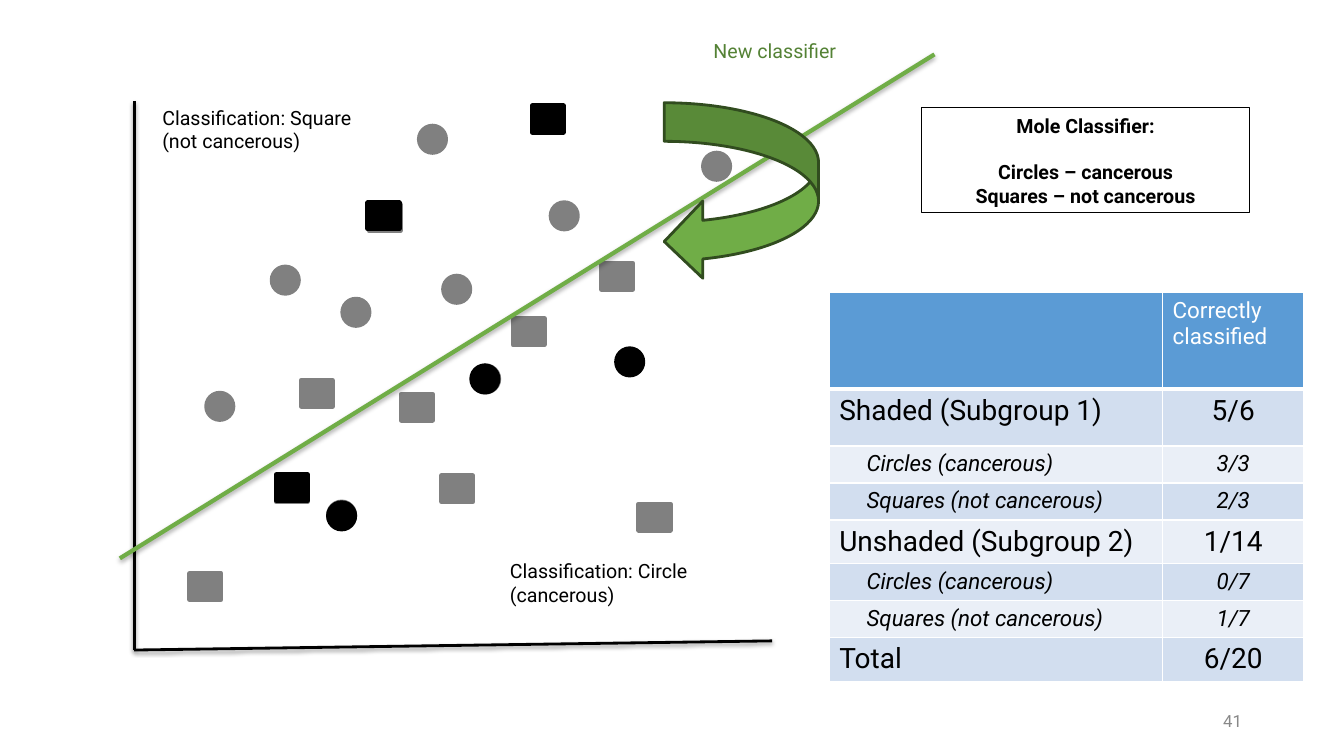
from lxml.etree import SubElement
from pptx import Presentation
from pptx.dml.color import RGBColor
from pptx.enum.shapes import MSO_CONNECTOR, MSO_SHAPE
from pptx.enum.text import MSO_ANCHOR, PP_ALIGN
from pptx.oxml.ns import qn
from pptx.util import Cm, Pt

FONT = "Roboto"
BLACK, GRAY, WHITE = "000000", "808080", "FFFFFF"
GREEN, DARK_GREEN, LABEL_GREEN = "70AD47", "314C1F", "548235"
HEADER_BLUE, BANDS = "5B9BD5", ("D2DEEF", "EAEFF7")
SQUARE, CIRCLE = (MSO_SHAPE.RECTANGLE, 0.79), (MSO_SHAPE.OVAL, 0.66)
MARK_HEIGHT = 0.66

MOLES = [
    (SQUARE, GRAY, [(9.3, 5.16), (6.96, 11.99), (10.11, 9.93), (12.93, 8.03), (15.16, 6.63),
                    (7.59, 9.58), (4.78, 14.45), (11.13, 11.99), (16.1, 12.7)]),
    (CIRCLE, GRAY, [(8.64, 7.54), (11.18, 6.96), (13.89, 5.11), (8.28, 12.65), (6.86, 6.73),
                    (5.21, 9.91), (11.91, 9.22), (17.73, 3.86), (10.57, 3.18)]),
    (CIRCLE, BLACK, [(15.54, 8.79), (11.89, 9.22), (8.28, 12.67)]),
    (SQUARE, BLACK, [(9.27, 5.11), (13.41, 2.67), (6.96, 11.96)]),
]

GROUP, DETAIL = (20, False, 0.25), (16, True, 0.94)
RESULTS = [
    ("Shaded (Subgroup 1)", "5/6", GROUP, 1.43),
    ("Circles (cancerous)", "3/3", DETAIL, 0.91),
    ("Squares (not cancerous)", "2/3", DETAIL, 0.91),
    ("Unshaded (Subgroup 2)", "1/14", GROUP, 1.09),
    ("Circles (cancerous)", "0/7", DETAIL, 0.91),
    ("Squares (not cancerous)", "1/7", DETAIL, 0.91),
    ("Total", "6/20", GROUP, 1.09),
]


def color(value):
    """Turn a hex string into a colour."""
    return RGBColor.from_string(value)


def write(para, text, size, ink=BLACK, bold=False, italic=False, align=PP_ALIGN.LEFT):
    """Add one formatted run to a paragraph."""
    para.alignment = align
    span = para.add_run()
    span.text = text
    font = span.font
    font.name, font.size, font.bold, font.italic = FONT, Pt(size), bold, italic
    font.color.rgb = color(ink)


def fill_frame(frame, lines, size, **style):
    """Write each line as a paragraph of a wrapping text frame."""
    frame.word_wrap = True
    for index, text in enumerate(lines):
        para = frame.add_paragraph() if index else frame.paragraphs[0]
        write(para, text, size, **style)


def add_label(page, frame, lines, size=14, anchor=MSO_ANCHOR.TOP, **style):
    """Add a text box."""
    box = page.shapes.add_textbox(*map(Cm, frame))
    box.text_frame.vertical_anchor = anchor
    fill_frame(box.text_frame, lines, size, **style)


def add_figure(page, kind, frame, fill, line, width):
    """Add a preset shape; without a fill it stays open."""
    shape = page.shapes.add_shape(kind, *map(Cm, frame))
    shape.shadow.inherit = False
    if fill:
        shape.fill.solid()
        shape.fill.fore_color.rgb = color(fill)
    else:
        shape.fill.background()
    shape.line.color.rgb = color(line)
    shape.line.width = Pt(width)
    return shape


def add_line(page, start, end, ink, width, shade):
    """Add a straight line with a soft shadow below it."""
    line = page.shapes.add_connector(MSO_CONNECTOR.STRAIGHT, *map(Cm, start + end))
    line.line.color.rgb = color(ink)
    line.line.width = Pt(width)
    effects = SubElement(line._element.spPr, qn("a:effectLst"))
    shadow = SubElement(effects, qn("a:outerShdw"), blurRad=str(Pt(3.1)), dist=str(Pt(1.6)),
                        dir="5400000", rotWithShape="0")
    black = SubElement(shadow, qn("a:srgbClr"), val=BLACK)
    SubElement(black, qn("a:alpha"), val=str(shade * 1000))


def style_cell(cell, fill, bottom=1):
    """Give a cell white borders and a solid fill."""
    properties = cell._tc.get_or_add_tcPr()
    for side, width in (("L", 1), ("R", 1), ("T", 1), ("B", bottom)):
        border = SubElement(properties, qn(f"a:ln{side}"), w=str(Pt(width)))
        SubElement(SubElement(border, qn("a:solidFill")), qn("a:srgbClr"), val=WHITE)
    cell.fill.solid()
    cell.fill.fore_color.rgb = color(fill)


def add_results(page):
    """Add the table of correctly classified moles."""
    frame = page.shapes.add_table(len(RESULTS) + 1, 2, Cm(20.9), Cm(7.37), Cm(11.96), Cm(9.69))
    table = frame.table
    table.first_row = table.horz_banding = False
    table.columns[0].width, table.columns[1].width = Cm(8.4), Cm(3.56)
    table.rows[0].height = Cm(2.44)
    for cell in table.rows[0].cells:
        style_cell(cell, HEADER_BLUE, bottom=3)
    write(table.cell(0, 1).text_frame.paragraphs[0], "Correctly classified", 16, WHITE)
    for row, (name, score, (size, italic, indent), height) in enumerate(RESULTS, 1):
        table.rows[row].height = Cm(height)
        table.cell(row, 0).margin_left = Cm(indent)
        for column, (text, align) in enumerate(((name, PP_ALIGN.LEFT), (score, PP_ALIGN.CENTER))):
            cell = table.cell(row, column)
            style_cell(cell, BANDS[(row - 1) % 2])
            write(cell.text_frame.paragraphs[0], text, size, italic=italic, align=align)


def add_moles(page):
    """Scatter the circles and squares."""
    for (kind, width), ink, places in MOLES:
        for left, top in places:
            add_figure(page, kind, (left, top, width, MARK_HEIGHT), ink, ink, 3.5)


def add_key(page):
    """Add the framed key of the mole classifier."""
    key = add_figure(page, MSO_SHAPE.RECTANGLE, (23.22, 2.72, 8.28, 2.64), None, BLACK, 0.75)
    lines = ["Mole Classifier:", "Circles – cancerous", "Squares – not cancerous"]
    fill_frame(key.text_frame, lines, 14, bold=True, align=PP_ALIGN.CENTER)
    key.text_frame.paragraphs[1].space_before = Pt(16.5)


def main():
    """Build the slide and save it."""
    deck = Presentation()
    deck.slide_width, deck.slide_height = Cm(33.87), Cm(19.05)
    page = deck.slides.add_slide(deck.slide_layouts[6])
    add_label(page, (23.93, 17.65, 7.62, 1.02), ["41"], 12, MSO_ANCHOR.MIDDLE,
              ink="888888", align=PP_ALIGN.RIGHT)
    add_results(page)
    add_line(page, (3.38, 2.54), (3.38, 16.38), BLACK, 2, 38)
    add_line(page, (19.46, 16.15), (3.38, 16.38), BLACK, 2, 38)
    add_moles(page)
    add_line(page, (3.02, 14.07), (23.55, 1.37), GREEN, 3, 35)
    add_label(page, (3.84, 2.54, 7.16, 1.45), ["Classification: Square", "(not cancerous)"])
    add_label(page, (12.6, 13.97, 6.27, 1.45), ["Classification: Circle (cancerous)"])
    add_key(page)
    add_figure(page, MSO_SHAPE.CURVED_LEFT_ARROW, (16.74, 2.59, 3.89, 4.47), GREEN, DARK_GREEN, 2)
    add_label(page, (17.73, 0.86, 6.27, 0.86), ["New classifier"], ink=LABEL_GREEN)
    deck.save("out.pptx")


if __name__ == "__main__":
    main()
